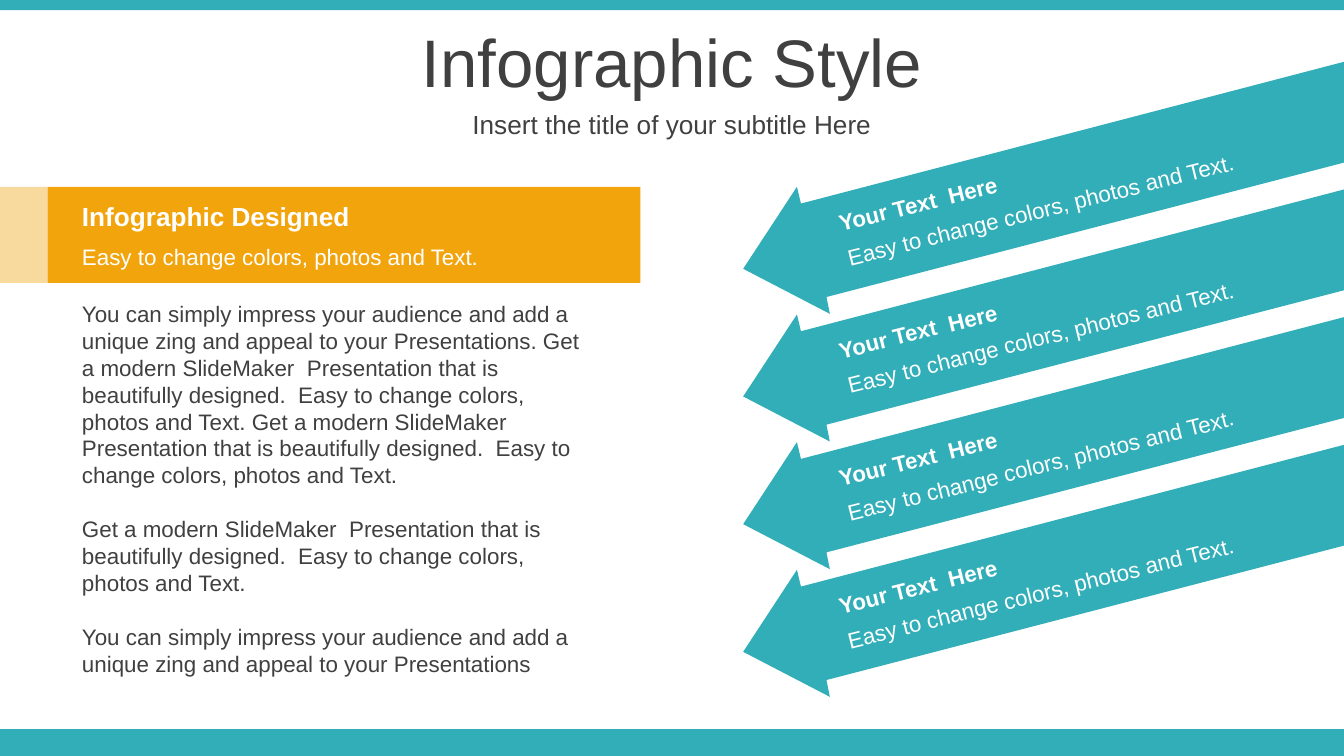
import pptx
import pptx.util
import pptx.dml.color
import pptx.enum.shapes
import pptx.enum.text
import pptx.oxml
import pptx.oxml.ns
from dataclasses import dataclass

COLS, ROWS = 100, 56.25  # grid over the slide, cells of a tenth of an inch


@dataclass
class Theme:
    font: str = "Arial"
    teal: str = "32AEB8"
    gold: str = "F2A40D"
    dark: str = "404040"
    white: str = "FFFFFF"
    title: int = 36
    head: int = 14
    body: int = 12


def cell(num):
    return pptx.util.Emu(round(num * 91440))


def color(code):
    return pptx.dml.color.RGBColor.from_string(code)


def write(shape, *lines, size, ink, font, bold=False, align="LEFT", anchor="TOP", gap=0):
    frame = shape.text_frame
    frame.word_wrap = True
    frame.auto_size = pptx.enum.text.MSO_AUTO_SIZE.NONE
    frame.vertical_anchor = getattr(pptx.enum.text.MSO_ANCHOR, anchor)
    for spot, line in enumerate(lines):
        para = frame.add_paragraph() if spot else frame.paragraphs[0]
        para.alignment = getattr(pptx.enum.text.PP_ALIGN, align)
        para.space_before = pptx.util.Pt(gap if spot else 0)
        run = para.add_run()
        run.text = line
        run.font.name, run.font.size, run.font.bold = font, pptx.util.Pt(size), bold
        run.font.color.rgb = color(ink)


class Deck:
    def __init__(self, theme):
        self.theme = theme
        self.file = pptx.Presentation()
        self.file.slide_width, self.file.slide_height = cell(COLS), cell(ROWS)
        self.slide = self.file.slides.add_slide(self.file.slide_layouts[0])

    def paint(self, shape, fill, alpha=None):
        shape.shadow.inherit = False
        shape.fill.solid()
        shape.fill.fore_color.rgb = color(fill)
        shape.line.fill.background()
        if alpha:
            tone = shape.fill._xPr.find(".//" + pptx.oxml.ns.qn("a:srgbClr"))
            tone.append(pptx.oxml.parse_xml(
                f'<a:alpha {pptx.oxml.ns.nsdecls("a")} val="{alpha * 1000}"/>'))

    def bar(self, x, y, wide, high, fill, alpha=None):
        kind = pptx.enum.shapes.MSO_SHAPE.RECTANGLE
        shape = self.slide.shapes.add_shape(kind, *map(cell, (x, y, wide, high)))
        self.paint(shape, fill, alpha)

    def head(self, shape, y, high, line, size):
        shape.left, shape.top, shape.width, shape.height = map(cell, (0, y, COLS, high))
        write(shape, line, size=size, ink=self.theme.dark, font=self.theme.font,
              align="CENTER", anchor="MIDDLE")

    def text(self, x, y, wide, high, *lines, turn=0, **style):
        box = self.slide.shapes.add_textbox(*map(cell, (x, y, wide, high)))
        box.rotation = turn
        base = dict(size=self.theme.body, ink=self.theme.white, font=self.theme.font)
        write(box, *lines, **{**base, **style})

    def arrow(self, drop):
        # Outline runs from the slide's right edge to the tip and back
        edge = [(100, 4.6), (100, 12.1), (61.5, 22.1), (61.75, 23.35),
                (55.3, 20), (59.3, 13.9), (59.6, 15.15)]
        dots = [(cell(x), cell(y + drop)) for x, y in edge]
        pen = self.slide.shapes.build_freeform(*dots[0])
        pen.add_line_segments(dots[1:], close=True)
        self.paint(pen.convert_to_shape(), self.theme.teal)


def main():
    theme = Theme()
    deck = Deck(theme)
    easy = "Easy to change colors, photos and Text."
    zing = ("You can simply impress your audience and add a unique zing "
            "and appeal to your Presentations")
    modern = ("Get a modern SlideMaker  Presentation that is beautifully designed.  " + easy)

    # Frame bars
    deck.bar(0, 54.25, COLS, ROWS - 54.25, theme.teal)
    deck.bar(0, 0, COLS, 0.75, theme.teal)

    # Title and subtitle
    title, sub = deck.slide.placeholders
    deck.head(title, 1.35, 6.3, "Infographic Style", theme.title)
    deck.head(sub, 7.7, 3.1, "Insert the title of your subtitle Here", theme.head)

    # Gold banner
    deck.bar(3.55, 13.9, 44.1, 7.15, theme.gold)
    deck.bar(0, 13.9, 3.55, 7.15, theme.gold, alpha=40)
    deck.text(5.12, 14.4, 35.4, 3.4, "Infographic Designed", size=theme.head, bold=True)
    deck.text(5.12, 17.6, 35.4, 3, easy)

    # Body copy
    deck.text(5.12, 21.85, 39.4, 29.3, f"{zing}. {modern} {modern}", modern, zing,
              ink=theme.dark, gap=14.4)

    # Four slanted arrows with captions
    for row in range(4):
        drop = row * 9.5
        deck.arrow(drop)
        deck.text(61.64, 13.8 + drop, 33.9, 3, easy, turn=346)
        deck.text(60.98, 11.24 + drop, 33.9, 3, "Your Text  Here", turn=346, bold=True)

    deck.file.save("out.pptx")


if __name__ == "__main__":
    main()
